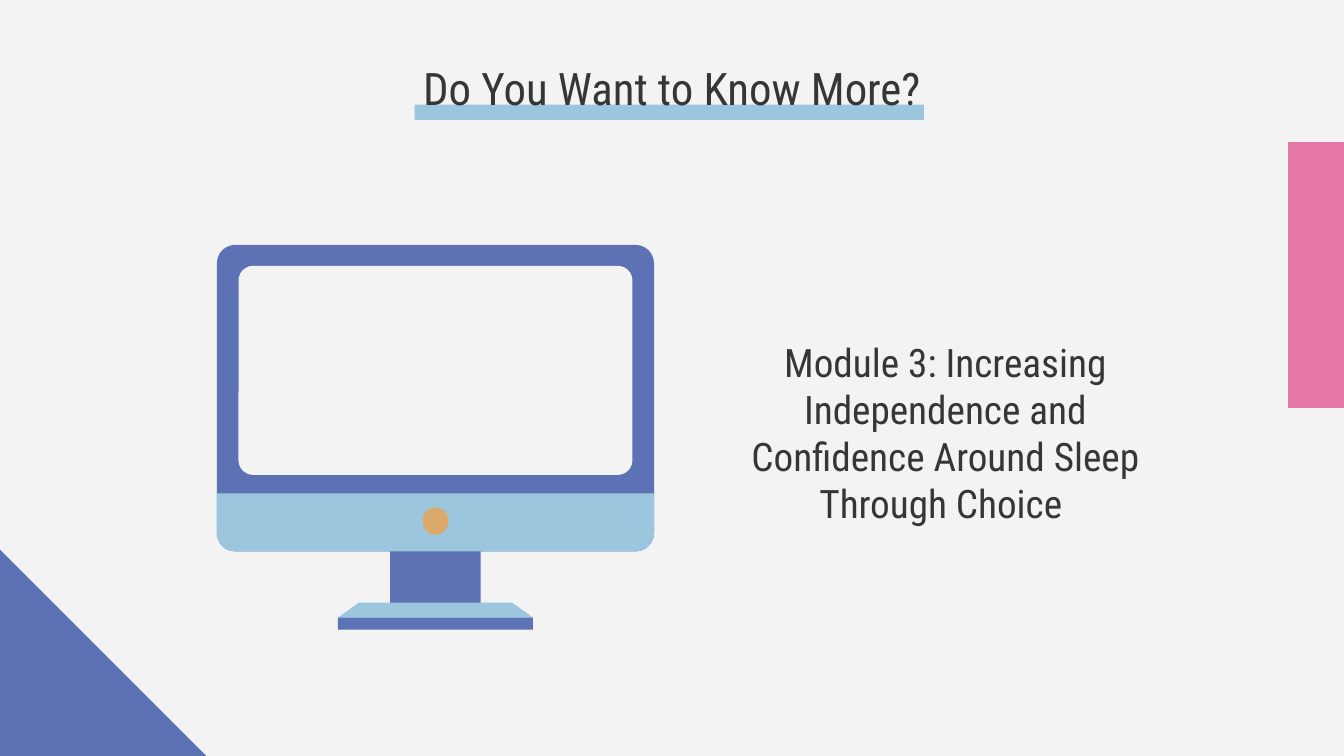
from pptx import Presentation
from pptx.dml.color import RGBColor
from pptx.enum.shapes import MSO_SHAPE
from pptx.enum.text import MSO_ANCHOR, MSO_AUTO_SIZE, PP_ALIGN
from pptx.util import Pt

RECTANGLE = MSO_SHAPE.RECTANGLE
ROUNDED = MSO_SHAPE.ROUNDED_RECTANGLE
BOTTOM_ROUNDED = MSO_SHAPE.ROUND_2_SAME_RECTANGLE
TRIANGLE = MSO_SHAPE.RIGHT_TRIANGLE
TRAPEZOID = MSO_SHAPE.TRAPEZOID
OVAL = MSO_SHAPE.OVAL
CENTER = PP_ALIGN.CENTER
MIDDLE = MSO_ANCHOR.MIDDLE
BOTTOM = MSO_ANCHOR.BOTTOM
NO_AUTOFIT = MSO_AUTO_SIZE.NONE

WIDTH, HEIGHT = 720, 405
TITLE_ONLY = 5
FONT = "Roboto Condensed"
COLORS = {
    "background": "F3F3F3",
    "text": "363636",
    "blue": "5C72B4",
    "sky": "9CC6DE",
    "pink": "E477A3",
    "gold": "DBA96B",
}


def color(name):
    return RGBColor.from_string(COLORS[name])


def write(frame, text, size=24, anchor=MIDDLE, align=CENTER, ink="text"):
    frame.word_wrap = True
    frame.auto_size = NO_AUTOFIT
    frame.vertical_anchor = anchor
    frame.margin_left = frame.margin_right = Pt(7.2)
    frame.margin_top = frame.margin_bottom = Pt(7.2)
    paragraph = frame.paragraphs[0]
    paragraph.alignment = align
    run = paragraph.add_run()
    run.text = text
    run.font.name = FONT
    run.font.size = Pt(size)
    run.font.color.rgb = color(ink)


class SlideBuilder:
    """Draw styled elements on one slide, with lengths in points."""

    def __init__(self, slide):
        self.slide = slide
        slide.background.fill.solid()
        slide.background.fill.fore_color.rgb = color("background")

    def block(self, kind, left, top, width, height, fill, adjustments=()):
        shape = self.slide.shapes.add_shape(
            kind, Pt(left), Pt(top), Pt(width), Pt(height)
        )
        shape.shadow.inherit = False
        shape.fill.solid()
        shape.fill.fore_color.rgb = color(fill)
        shape.line.fill.background()
        for index, value in enumerate(adjustments):
            shape.adjustments[index] = value
        return shape

    def title(self, text, left, top, width, height, **style):
        title = self.slide.shapes.title
        title.left, title.top = Pt(left), Pt(top)
        title.width, title.height = Pt(width), Pt(height)
        write(title.text_frame, text, **style)
        tree = title.element.getparent()
        tree.append(title.element)

    def text(self, text, left, top, width, height, **style):
        box = self.slide.shapes.add_textbox(
            Pt(left), Pt(top), Pt(width), Pt(height)
        )
        write(box.text_frame, text, **style)

    def monitor(self, left, top):
        width, height = 234.2, 164.2
        middle = left + width / 2

        def centered(kind, offset, part_width, part_height, fill, adjustments=()):
            self.block(kind, middle - part_width / 2, top + offset,
                       part_width, part_height, fill, adjustments)

        centered(ROUNDED, 0, width, height, "blue", [0.06])
        centered(ROUNDED, 11.2, 211, 112, "background", [0.07])
        centered(RECTANGLE, height - 1, 48.5, 32, "blue")
        centered(TRAPEZOID, 191.7, 104.5, 8, "sky", [1.4])
        centered(RECTANGLE, 199.7, 104.5, 6.5, "blue")
        centered(BOTTOM_ROUNDED, 133.2, width, 31, "sky", [0, 0.31])
        centered(OVAL, 140.6, 14, 14.8, "gold")


def main():
    presentation = Presentation()
    presentation.slide_width = Pt(WIDTH)
    presentation.slide_height = Pt(HEIGHT)
    slide = presentation.slides.add_slide(presentation.slide_layouts[TITLE_ONLY])
    builder = SlideBuilder(slide)

    corner = 110.6
    builder.block(TRIANGLE, 0, HEIGHT - corner, corner, corner, "blue")
    builder.block(RECTANGLE, 690, 76.2, 38, 142.4, "pink")
    builder.block(RECTANGLE, 222.2, 56.1, 272.8, 8.2, "sky")
    builder.title("Do You Want to Know More?", 24.5, 24.5, 671, 45.3)
    builder.text(
        "Module 3: Increasing Independence and Confidence Around Sleep Through Choice ",
        384.5, 234.7, 244, 54.7, size=21, anchor=BOTTOM,
    )
    builder.monitor(116.2, 131.2)
    presentation.save("out.pptx")


if __name__ == "__main__":
    main()
